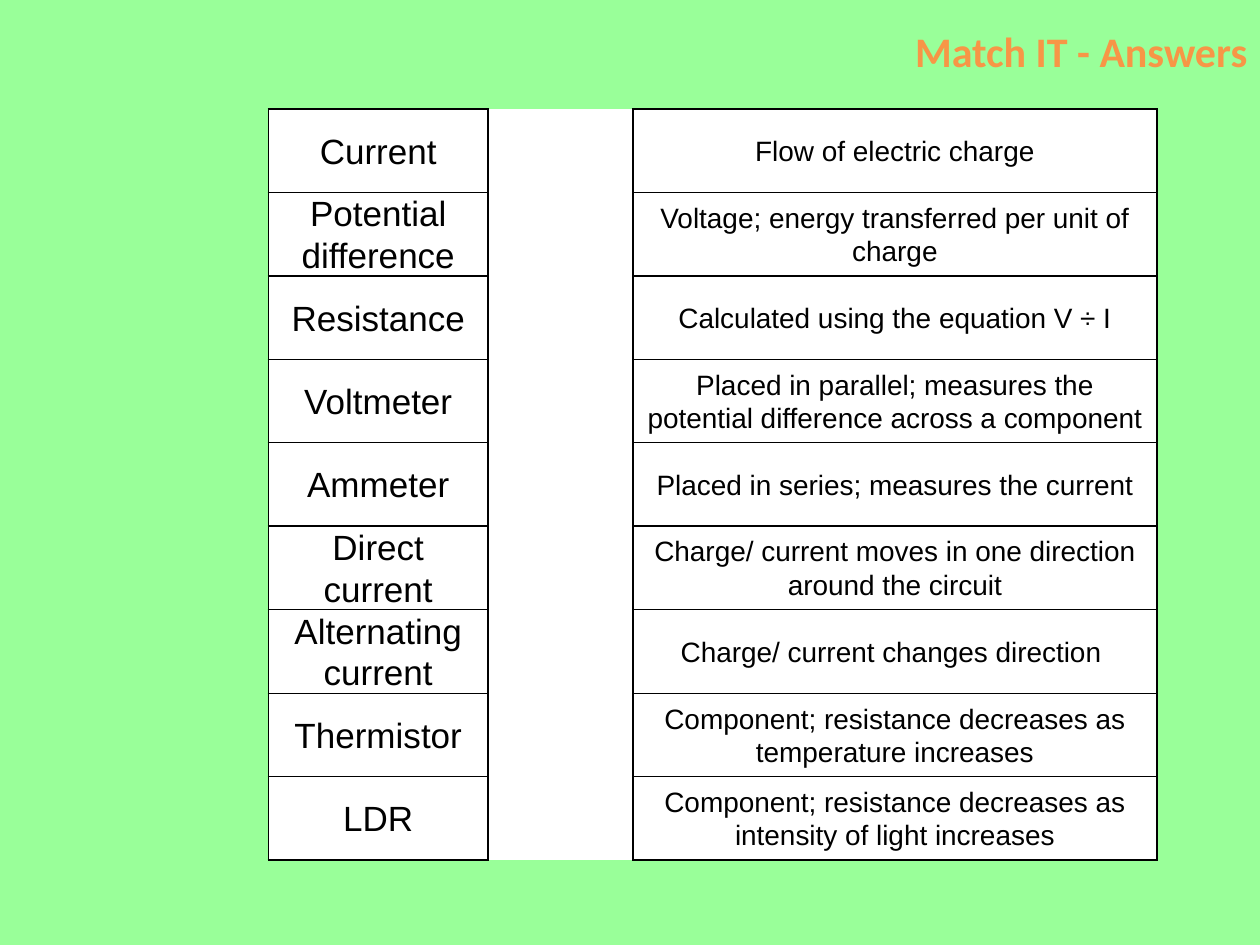
"""Build the answer slide that pairs circuit terms with their meanings."""
from lxml.etree import SubElement as Sub
from pptx import Presentation
from pptx.dml.color import RGBColor
from pptx.enum.text import MSO_ANCHOR as Anchor, PP_ALIGN as Align
from pptx.oxml.ns import qn
from pptx.util import Cm, Pt

GREEN = RGBColor(0x99, 0xFF, 0x99)
ORANGE = RGBColor(0xF7, 0x96, 0x46)
BLACK = RGBColor(0, 0, 0)
WHITE = RGBColor(0xFF, 0xFF, 0xFF)

PAIRS = [
    ("Current", "Flow of electric charge"),
    ("Potential difference", "Voltage; energy transferred per unit of charge"),
    ("Resistance", "Calculated using the equation V ÷ I"),
    ("Voltmeter", "Placed in parallel; measures the potential difference across a component"),
    ("Ammeter", "Placed in series; measures the current"),
    ("Direct current", "Charge/ current moves in one direction around the circuit"),
    ("Alternating current", "Charge/ current changes direction "),
    ("Thermistor", "Component; resistance decreases as temperature increases"),
    ("LDR", "Component; resistance decreases as intensity of light increases"),
]


def write(frame, text, size, font="Arial", color=BLACK, bold=False, align=Align.CENTER, lines=1.0):
    para = frame.paragraphs[0]
    para.text = text
    para.alignment = align
    para.line_spacing = lines
    para.space_before = Pt(0)
    face = para.runs[0].font
    face.name, face.size, face.bold = font, Pt(size), bold
    face.color.rgb = color


class Deck:
    def __init__(self):
        self.show = Presentation()
        self.show.slide_width, self.show.slide_height = Cm(25.4), Cm(19.05)
        self.slide = self.show.slides.add_slide(self.show.slide_layouts[5])
        fill = self.slide.background.fill
        fill.solid()
        fill.fore_color.rgb = GREEN

    def title(self, text, left, top, width, height):
        box = self.slide.shapes.title
        box.left, box.top, box.width, box.height = Cm(left), Cm(top), Cm(width), Cm(height)
        box.text_frame.vertical_anchor = Anchor.MIDDLE
        write(box.text_frame, text, 24, "Calibri", ORANGE, True, Align.RIGHT)

    def style(self, cell, sides):
        props = cell._tc.get_or_add_tcPr()
        for side in "LRTB":
            line = Sub(props, qn(f"a:ln{side}"), w=str(Pt(1)))
            if side in sides:
                Sub(Sub(line, qn("a:solidFill")), qn("a:srgbClr"), val=str(BLACK))
            else:
                Sub(line, qn("a:noFill"))
        cell.fill.solid()
        cell.fill.fore_color.rgb = WHITE
        cell.margin_left = cell.margin_right = Cm(0.18)
        cell.margin_top = cell.margin_bottom = 0
        cell.vertical_anchor = Anchor.MIDDLE

    def table(self, pairs, left, top, widths, height):
        count = len(pairs)
        grid = self.slide.shapes.add_table(
            count, len(widths), Cm(left), Cm(top), Cm(sum(widths)), Cm(height * count)).table
        grid.first_row = grid.horz_banding = False
        for col, width in zip(grid.columns, widths):
            col.width = Cm(width)
        for row, (term, sense) in enumerate(pairs):
            grid.rows[row].height = Cm(height)
            for col, sides in enumerate(("LRTB", "LR", "LRTB")):
                self.style(grid.cell(row, col), sides)
            write(grid.cell(row, 0).text_frame, term, 20, lines=1.07)
            write(grid.cell(row, 2).text_frame, sense, 16, lines=1.07)
        grid.cell(0, 1).merge(grid.cell(count - 1, 1))

    def save(self):
        self.show.save("out.pptx")


def main():
    deck = Deck()
    deck.title("Match IT - Answers", 4.5, 0.1, 20.9, 1.83)
    deck.table(PAIRS, 5.41, 2.2, (4.43, 2.92, 10.56), 1.68)
    deck.save()


if __name__ == "__main__":
    main()
